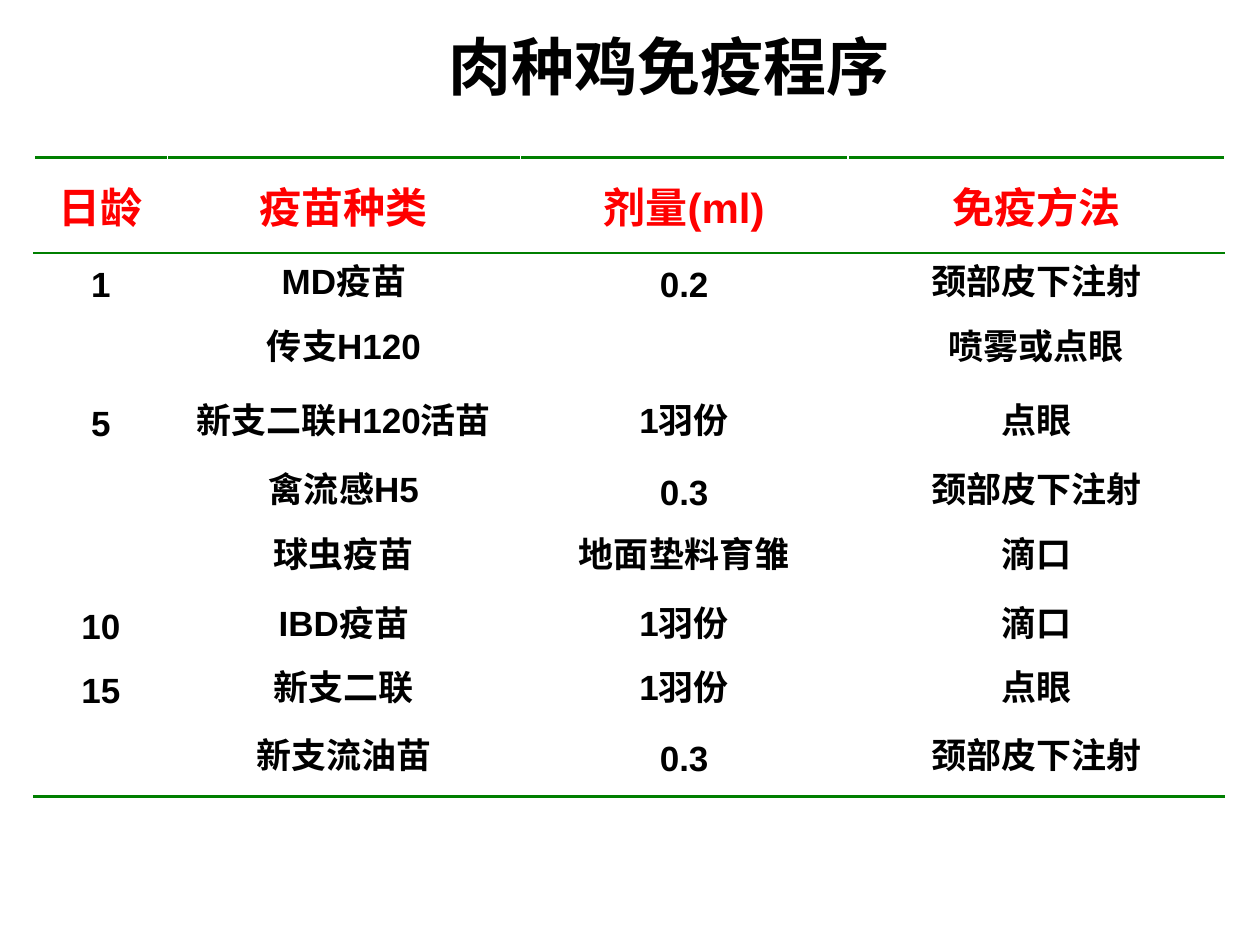
import pptx
import pptx.util
import pptx.dml.color
import pptx.enum.text
import pptx.oxml
import pptx.oxml.ns

Inches, Pt = pptx.util.Inches, pptx.util.Pt
MIDDLE = pptx.enum.text.MSO_ANCHOR.MIDDLE
CENTER = pptx.enum.text.PP_ALIGN.CENTER
HAN = "Noto Sans CJK SC"
GREEN, RED, BLACK = "007F00", "FF0000", "000000"

TITLE = "肉种鸡免疫程序 "
ROWS = [
    ("日龄", "疫苗种类", "剂量(ml)", "免疫方法"),
    ("1", "MD疫苗", "0.2", "颈部皮下注射"),
    ("", "传支H120", "", "喷雾或点眼"),
    ("5", "新支二联H120活苗", "1羽份", "点眼"),
    ("", "禽流感H5", "0.3", "颈部皮下注射"),
    ("", "球虫疫苗", "地面垫料育雏", "滴口"),
    ("10", "IBD疫苗", "1羽份", "滴口"),
    ("15", "新支二联", "1羽份", "点眼"),
    ("", "新支流油苗", "0.3", "颈部皮下注射"),
]
WIDTHS = [1.06, 2.8, 2.6, 2.99]
HEIGHTS = [0.76, 0.48, 0.55, 0.63, 0.47, 0.55, 0.55, 0.47, 0.61]
LAST = len(ROWS) - 1
# row: {border side: width in points}
RULES = {0: {"T": 2, "B": 1}, 1: {"T": 1}, LAST: {"B": 2}}


def paint(font, size, color, name):
    font.size, font.bold, font.name = Pt(size), True, name
    font.color.rgb = pptx.dml.color.RGBColor.from_string(color)


def write(frame, text, size, color, name):
    """Fill a frame with one centred bold line."""
    frame.text = text
    para = frame.paragraphs[0]
    para.alignment = CENTER
    for run in para.runs:
        paint(run.font, size, color, name)
        east = pptx.oxml.parse_xml(
            f'<a:ea {pptx.oxml.ns.nsdecls("a")} typeface="{HAN}"/>')
        run.font._element.find(pptx.oxml.ns.qn("a:latin")).addnext(east)
    return para


def rule(cell, sides):
    """Draw the given borders; they must come before the cell fill."""
    props = cell._tc.get_or_add_tcPr()
    for spot, (side, width) in enumerate(sides.items()):
        props.insert(spot, pptx.oxml.parse_xml(
            f'<a:ln{side} {pptx.oxml.ns.nsdecls("a")} w="{Pt(width)}">'
            f'<a:solidFill><a:srgbClr val="{GREEN}"/></a:solidFill></a:ln{side}>'))


deck = pptx.Presentation()
deck.slide_width, deck.slide_height = Inches(10), Inches(7.5)
slide = deck.slides.add_slide(deck.slide_layouts[6])

table = slide.shapes.add_table(
    len(ROWS), len(WIDTHS), Inches(0.27), Inches(1.25),
    Inches(sum(WIDTHS)), Inches(sum(HEIGHTS))).table
table.first_row = table.horz_banding = False
for col, width in zip(table.columns, WIDTHS):
    col.width = Inches(width)
for row, height in zip(table.rows, HEIGHTS):
    row.height = Inches(height)

for r, texts in enumerate(ROWS):
    size, color = (24, RED) if r == 0 else (20, BLACK)
    for c, text in enumerate(texts):
        cell = table.cell(r, c)
        cell.fill.background()
        cell.vertical_anchor = MIDDLE
        cell.margin_left = cell.margin_right = Inches(0.1)
        cell.margin_top = cell.margin_bottom = Inches(0.06)
        para = write(cell.text_frame, text, size, color, "Arial")
        if r:
            para.line_spacing = Pt(24)
        rule(cell, RULES.get(r, {}))

frame = slide.shapes.add_textbox(
    Inches(1.33), Inches(0.25), Inches(8.08), Inches(0.53)).text_frame
frame.word_wrap = True
frame.vertical_anchor = MIDDLE
write(frame, TITLE, 36, BLACK, HAN)

deck.save("out.pptx")
